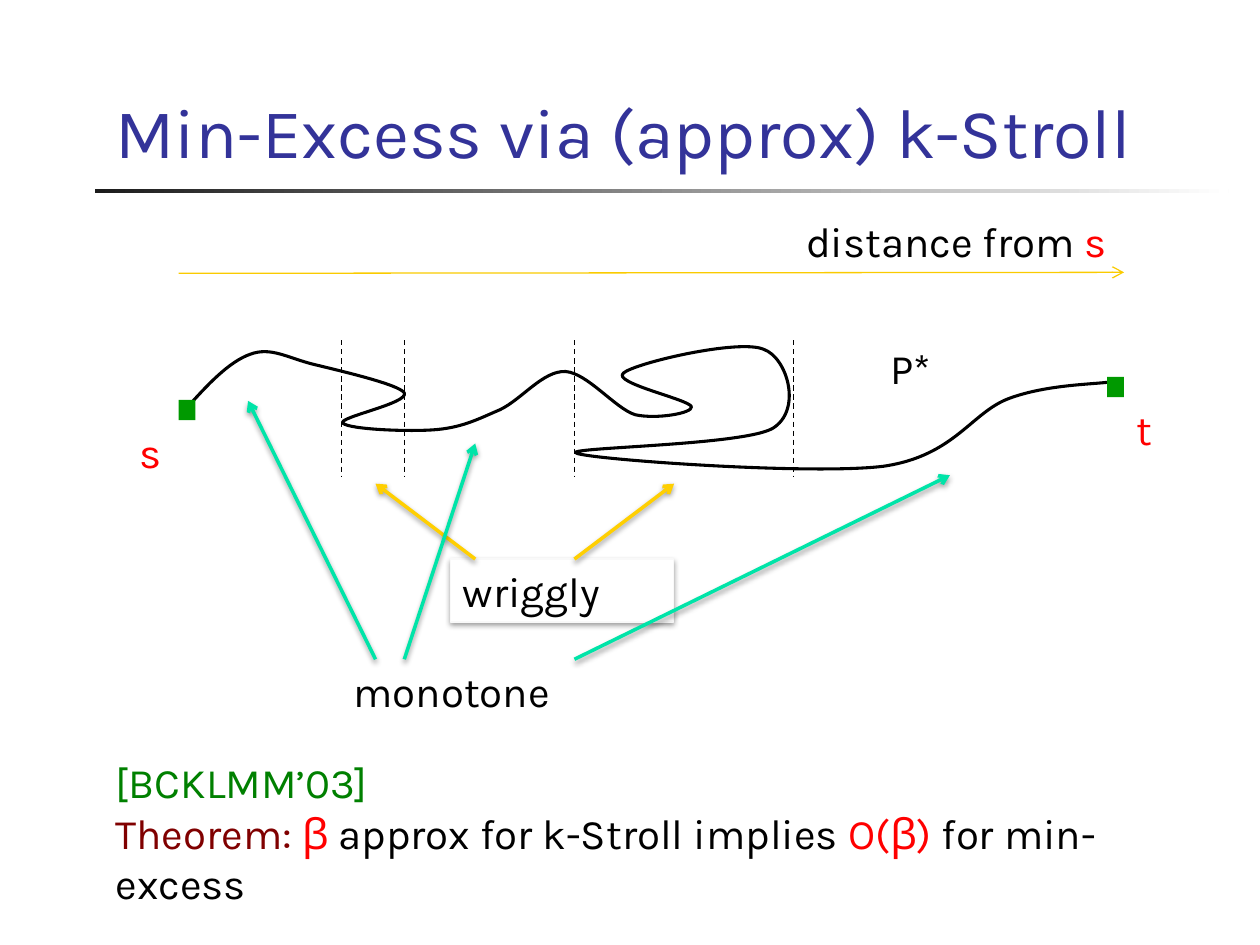
import pptx
import pptx.dml.color
import pptx.enum.dml
import pptx.enum.shapes
import pptx.enum.text
import pptx.oxml
import pptx.oxml.ns
import pptx.util
from pptx.util import Cm

RECTANGLE = pptx.enum.shapes.MSO_SHAPE.RECTANGLE
BLACK, RED, GREEN = "000000", "FF0000", "009900"
LABEL_HEIGHT = 1.27
STROLL = [
    (0.16, 1.43),
    (0.59, 0.95), (1.02, 0.49), (1.45, 0.34),
    (1.86, 0.19), (2.19, 0.41), (2.7, 0.54),
    (3.23, 0.67), (4.45, 0.95), (4.55, 1.12),
    (4.66, 1.33), (3.21, 1.61), (3.31, 1.73),
    (3.44, 1.86), (4.68, 1.91), (5.21, 1.86),
    (5.75, 1.81), (6.08, 1.63), (6.48, 1.46),
    (6.92, 1.25), (7.35, 0.67), (7.8, 0.69),
    (8.24, 0.72), (8.8, 1.43), (9.2, 1.56),
    (9.63, 1.66), (10.37, 1.53), (10.34, 1.4),
    (10.29, 1.25), (8.72, 0.92), (8.97, 0.72),
    (9.2, 0.52), (11.28, 0.03), (11.79, 0.24),
    (12.28, 0.41), (12.58, 1.48), (11.97, 1.84),
    (11.34, 2.19), (7.65, 2.22), (8.03, 2.34),
    (8.41, 2.47), (12.76, 2.78), (14.21, 2.6),
    (15.65, 2.39), (15.98, 1.51), (16.75, 1.23),
    (17.51, 0.95), (18.45, 0.95), (18.78, 0.9),
    (19.11, 0.85), (18.8, 0.9), (18.8, 0.9),
]


def color(value):
    """Turn a hex string into a colour."""
    return pptx.dml.color.RGBColor.from_string(value)


def assign(target, values):
    """Set each attribute named in a dict."""
    for attribute, value in values.items():
        setattr(target, attribute, value)


def add_effects(part, shadow=False):
    """Give a part a soft drop shadow, or no effect at all."""
    drop = (
        '<a:outerShdw blurRad="40000" dist="20000" dir="5400000" rotWithShape="0">'
        '<a:srgbClr val="000000"><a:alpha val="38000"/></a:srgbClr></a:outerShdw>'
    )
    part._element.spPr.append(pptx.oxml.parse_xml(
        f'<a:effectLst {pptx.oxml.ns.nsdecls("a")}>{drop if shadow else ""}</a:effectLst>'
    ))


def write(frame, paragraphs, size=24, anchor=pptx.enum.text.MSO_ANCHOR.TOP):
    """Write paragraphs of (text, colour, font) runs into a text frame."""
    assign(frame, {"word_wrap": True, "vertical_anchor": anchor})
    for index, runs in enumerate(paragraphs):
        paragraph = frame.add_paragraph() if index else frame.paragraphs[0]
        paragraph.alignment = pptx.enum.text.PP_ALIGN.LEFT
        for text, ink, *font in runs:
            run = paragraph.add_run()
            run.text = text
            assign(run.font, {"size": pptx.util.Pt(size), "name": font[0] if font else "Karla"})
            run.font.color.rgb = color(ink)


def add_text(slide, left, top, width, height, paragraphs, **style):
    """Add a text box, measured in centimetres."""
    box = slide.shapes.add_textbox(Cm(left), Cm(top), Cm(width), Cm(height))
    write(box.text_frame, paragraphs, **style)


def add_block(slide, left, top, width, height, fill):
    """Add a plain filled rectangle without an outline."""
    block = slide.shapes.add_shape(RECTANGLE, Cm(left), Cm(top), Cm(width), Cm(height))
    block.fill.solid()
    block.fill.fore_color.rgb = color(fill)
    block.line.fill.background()
    return block


def add_line(slide, start, end, ink, width=0.75, arrow=False, dashed=False, shadow=False):
    """Add a straight line, with an arrowhead or dashes on request."""
    line = slide.shapes.add_connector(
        pptx.enum.shapes.MSO_CONNECTOR.STRAIGHT, *(Cm(value) for value in start + end)
    )
    line.line.color.rgb = color(ink)
    line.line.width = pptx.util.Pt(width)
    if dashed:
        line.line.dash_style = pptx.enum.dml.MSO_LINE.DASH
    if arrow:
        line.line._get_or_add_ln().append(pptx.oxml.parse_xml(
            f'<a:tailEnd {pptx.oxml.ns.nsdecls("a")} type="arrow"/>'
        ))
    add_effects(line, shadow)


def add_curve(slide, controls, ink, width):
    """Add an open chain of cubic curves through its control points."""
    points = [(Cm(x), Cm(y)) for x, y in controls]
    builder = slide.shapes.build_freeform(*points[0])
    builder.add_line_segments(points[1:], close=False)
    curve = builder.convert_to_shape()
    curve.shadow.inherit = False
    curve.fill.background()
    curve.line.color.rgb = color(ink)
    curve.line.width = pptx.util.Pt(width)
    legs = curve._element.xpath(".//a:lnTo")
    for first in range(0, len(legs), 3):
        cubic = pptx.oxml.parse_xml(f'<a:cubicBezTo {pptx.oxml.ns.nsdecls("a")}/>')
        legs[first].addprevious(cubic)
        for leg in legs[first:first + 3]:
            cubic.append(leg[0])
            leg.getparent().remove(leg)


def draw_title(slide, left, top, width, height):
    """Place the heading above its fading rule."""
    add_text(slide, left + 0.17, top, width - 0.15, height - 0.2,
             [[("Min-Excess via (approx) k-Stroll", "333399")]],
             size=40, anchor=pptx.enum.text.MSO_ANCHOR.BOTTOM)
    rule = add_block(slide, left, top + height, width, 0.08, "1C1C1C")
    rule.shadow.inherit = False
    rule.fill.gradient()
    rule.fill.gradient_angle = 0
    for stop, (position, shade) in zip(rule.fill.gradient_stops, ((0, "1C1C1C"), (1, "FFFFFF"))):
        stop.position = position
        stop.color.rgb = color(shade)


def draw_axis(slide, left, top, width, height):
    """Place the distance arrow and its caption."""
    add_line(slide, (left, top + height), (left + width, top + height - 0.02), "FACB00", arrow=True)
    add_text(slide, left + 12.4, top, 7.54, LABEL_HEIGHT, [[("distance from ", BLACK), ("s", RED)]])


def draw_stroll(slide, left, top, width, height):
    """Place the winding walk from s to t with its dashed cuts."""
    add_curve(slide, [(left + x, top + y) for x, y in STROLL], BLACK, 1.75)
    for x, y in ((0, 1.26), (width - 0.34, 0.8)):
        add_block(slide, left + x, top + y, 0.34, 0.41, GREEN).shadow.inherit = False
    for x in (3.28, 4.55, 7.98, 12.4):
        add_line(slide, (left + x, top + 0.06), (left + x, top + height), BLACK, dashed=True)
    for text, ink, x, y, span in (
        ("s", RED, -1.03, 1.68, 1.63), ("t", RED, width, 1.2, 1.63), ("P*", BLACK, 14.1, -0.02, 2.57),
    ):
        add_text(slide, left + x, top + y, span, LABEL_HEIGHT, [[(text, ink)]])


def draw_segment_labels(slide, left, top, width, height):
    """Place the two kinds of segment and the arrows to their examples."""
    wriggly_top, monotone_top = 3.19, height - LABEL_HEIGHT
    wriggly = add_block(slide, left + 4.08, top + wriggly_top, 4.5, LABEL_HEIGHT, "FFFFFF")
    wriggly.line.color.rgb = color("F9F9F9")
    wriggly.line.width = pptx.util.Pt(0.75)
    add_effects(wriggly, shadow=True)
    write(wriggly.text_frame, [[("wriggly", BLACK)]])
    add_text(slide, left + 1.88, top + monotone_top, 8.08, LABEL_HEIGHT, [[("monotone", BLACK)]])
    for start_x, start_y, end_x, end_y, ink in (
        (4.58, wriggly_top, 2.57, 1.67, "FFCF01"),
        (6.58, wriggly_top, 8.59, 1.67, "FFCF01"),
        (2.57, monotone_top, 0, 0, "00E4A8"),
        (6.58, monotone_top, width, 1.5, "00E4A8"),
        (3.15, monotone_top, 4.58, 0.86, "00E4A8"),
    ):
        add_line(slide, (left + start_x, top + start_y), (left + end_x, top + end_y),
                 ink, width=2, arrow=True, shadow=True)


def draw_theorem(slide, left, top, width, height):
    """Place the citation and the theorem."""
    add_text(slide, left, top, width, height, [
        [("[BCKLMM’03]", "008000")],
        [("Theorem: ", "800000"), ("β", RED, "Noto Sans"),
         (" approx for k-Stroll implies ", BLACK), ("O(", RED),
         ("β", RED, "Noto Sans"), (")", RED), (" for min-excess", BLACK)],
    ])


def main():
    """Build the slide and save it."""
    deck = pptx.Presentation()
    assign(deck, {"slide_width": Cm(25.4), "slide_height": Cm(19.05)})
    slide = deck.slides.add_slide(deck.slide_layouts[6])
    draw_title(slide, 1.91, 0.43, 22.86, 3.38)
    draw_stroll(slide, 3.6, 6.8, 19.06, 2.8)
    draw_axis(slide, 3.6, 4.22, 19.06, 1.29)
    draw_segment_labels(slide, 5, 8.08, 14.15, 6.48)
    draw_theorem(slide, 2.08, 15.13, 22.71, 2.31)
    deck.save("out.pptx")


if __name__ == "__main__":
    main()
